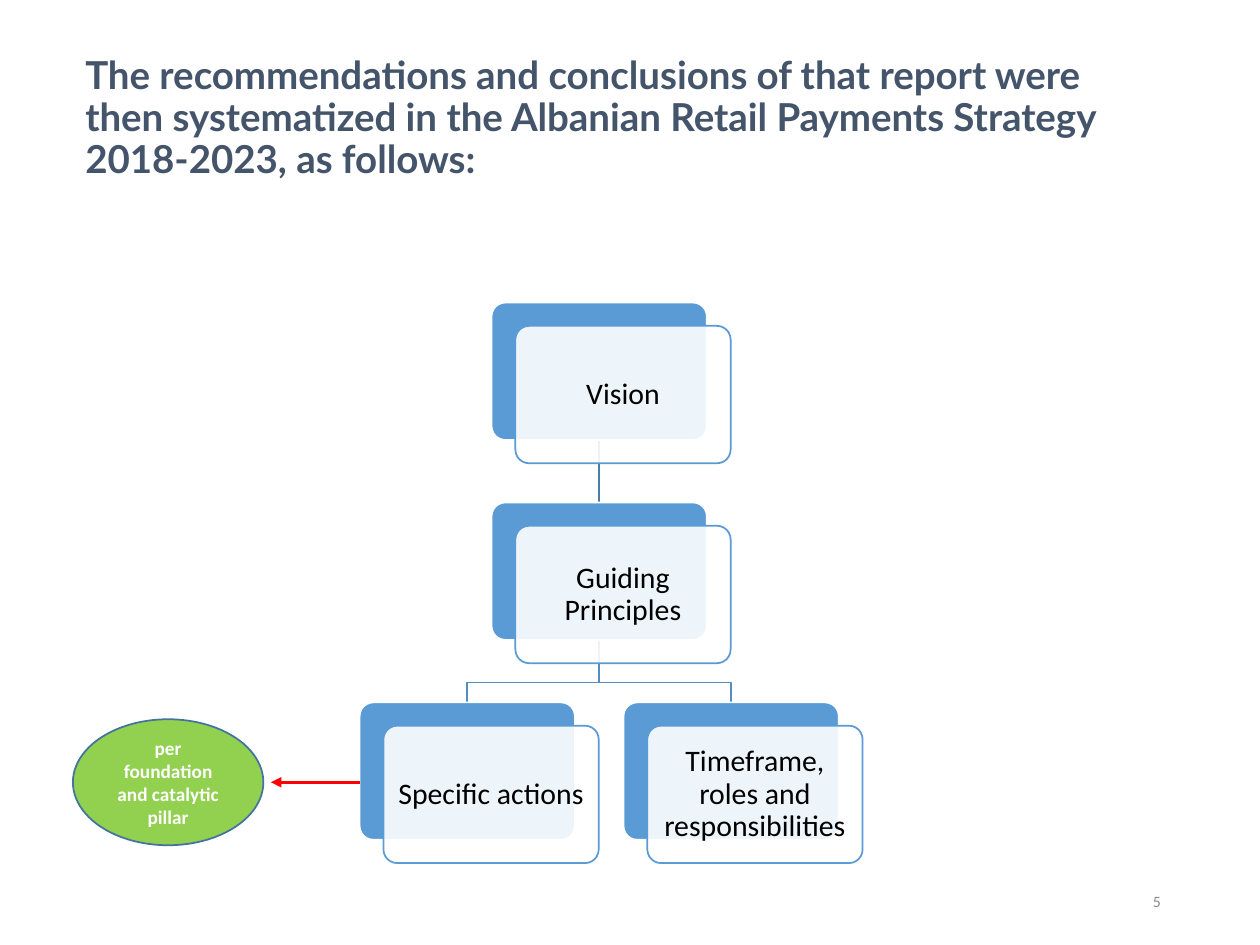
from dataclasses import dataclass

from lxml import etree
from pptx import Presentation
from pptx import util as u
from pptx.dml.color import RGBColor
from pptx.enum import shapes, text
from pptx.oxml import ns

CARD_WIDTH, CARD_HEIGHT = 4.34, 2.77
SHIFT_X, SHIFT_Y = 0.48, 0.47
FIRST_TOP, LEVEL_STEP = 6.1, 4.03
TRUNK_LEFT, BRANCH_OFFSET = 9.91, 2.66
ELBOW_DROP = 0.86


@dataclass(frozen=True)
class Card:
    label: str
    side: int
    level: int

    @property
    def left(self) -> float:
        return TRUNK_LEFT + self.side * BRANCH_OFFSET

    @property
    def top(self) -> float:
        return FIRST_TOP + self.level * LEVEL_STEP

    @property
    def center(self) -> float:
        return self.left + CARD_WIDTH / 2

    @property
    def bottom(self) -> float:
        return self.top + CARD_HEIGHT


def color(code: str) -> RGBColor:
    return RGBColor.from_string(code)


def set_line(item, code: str, width: float = 1) -> None:
    item.line.color.rgb = color(code)
    item.line.width = u.Pt(width)


def add_child(parent, tag: str, **attributes: str):
    return etree.SubElement(parent, ns.qn(tag), attributes)


def add_block(page, kind, left: float, top: float, width: float, height: float,
              fill: str, line: str):
    block = page.shapes.add_shape(kind, u.Cm(left), u.Cm(top), u.Cm(width), u.Cm(height))
    block.shadow.inherit = False
    block.fill.solid()
    block.fill.fore_color.rgb = color(fill)
    set_line(block, line)
    return block


def write(box, words: str, size: float, font: str, code: str, bold: bool = False,
          align=text.PP_ALIGN.LEFT, anchor=text.MSO_ANCHOR.TOP, spacing: float = 1.0) -> None:
    frame = box.text_frame
    frame.word_wrap = True
    frame.vertical_anchor = anchor
    para = frame.paragraphs[0]
    para.text = words
    para.alignment = align
    para.line_spacing = spacing
    para.font.size = u.Pt(size)
    para.font.name = font
    para.font.bold = bold
    para.font.color.rgb = color(code)


def add_text(page, left: float, top: float, width: float, height: float, words: str, **style) -> None:
    box = page.shapes.add_textbox(u.Cm(left), u.Cm(top), u.Cm(width), u.Cm(height))
    write(box, words, **style)


def add_card(page, card: Card) -> None:
    rounded = shapes.MSO_SHAPE.ROUNDED_RECTANGLE
    back = add_block(page, rounded, card.left, card.top, CARD_WIDTH, CARD_HEIGHT, "5B9BD5", "FFFFFF")
    front = add_block(page, rounded, card.left + SHIFT_X, card.top + SHIFT_Y,
                      CARD_WIDTH, CARD_HEIGHT, "FFFFFF", "5B9BD5")
    for block in (back, front):
        block.adjustments[0] = 0.1
    solid = front.element.spPr.find(ns.qn("a:solidFill"))
    add_child(solid[0], "a:alpha", val="90000")
    frame = front.text_frame
    frame.margin_left = frame.margin_right = u.Cm(0.18)
    frame.margin_top = frame.margin_bottom = u.Cm(0.18)
    write(front, card.label, 17, "Calibri", "000000", align=text.PP_ALIGN.CENTER,
          anchor=text.MSO_ANCHOR.MIDDLE, spacing=0.9)


def add_straight(page, start: tuple[float, float], end: tuple[float, float],
                 code: str, width: float = 1):
    line = page.shapes.add_connector(shapes.MSO_CONNECTOR.STRAIGHT, *map(u.Cm, start + end))
    set_line(line, code, width)
    add_child(line.element.spPr, "a:effectLst")
    return line


def add_elbow(page, parent: Card, child: Card) -> None:
    bend = parent.bottom + ELBOW_DROP
    points = [(parent.center, parent.bottom), (parent.center, bend),
              (child.center, bend), (child.center, child.top)]
    start, *rest = [(u.Cm(x), u.Cm(y)) for x, y in points]
    builder = page.shapes.build_freeform(*start)
    builder.add_line_segments(rest, close=False)
    elbow = builder.convert_to_shape()
    elbow.shadow.inherit = False
    elbow.fill.background()
    set_line(elbow, "538DC1")


def main() -> None:
    deck = Presentation()
    deck.slide_width, deck.slide_height = u.Cm(25.4), u.Cm(19.05)
    page = deck.slides.add_slide(deck.slide_layouts[6])

    add_text(page, 17.93, 17.65, 5.72, 1.02, "5", size=9, font="Calibri", code="8C8C8C",
             align=text.PP_ALIGN.RIGHT, anchor=text.MSO_ANCHOR.MIDDLE)
    add_text(page, 1.47, 1.02, 22.17, 2.39,
             "The recommendations and conclusions of that report were then systematized "
             "in the Albanian Retail Payments Strategy 2018-2023, as follows:",
             size=22, font="Lato", code="44546A", bold=True, spacing=0.9)

    vision = Card("Vision", 0, 0)
    principles = Card("Guiding Principles", 0, 1)
    actions = Card("Specific actions", -1, 2)
    timeframe = Card("Timeframe, roles and responsibilities", 1, 2)

    for child in (timeframe, actions):
        add_elbow(page, principles, child)
    add_straight(page, (vision.center, vision.bottom), (principles.center, principles.top), "497CAB")
    for card in (vision, principles, actions, timeframe):
        add_card(page, card)

    pillar = add_block(page, shapes.MSO_SHAPE.OVAL, 1.47, 14.5, 3.84, 2.54, "92D050", "43739E")
    write(pillar, "per foundation and catalytic pillar", 11, "Calibri", "FFFFFF", bold=True,
          align=text.PP_ALIGN.CENTER, anchor=text.MSO_ANCHOR.MIDDLE)
    arrow = add_straight(page, (7.26, 15.77), (5.46, 15.77), "FF0000", 1.5)
    add_child(arrow.line._get_or_add_ln(), "a:tailEnd", type="triangle")

    deck.save("out.pptx")


if __name__ == "__main__":
    main()
